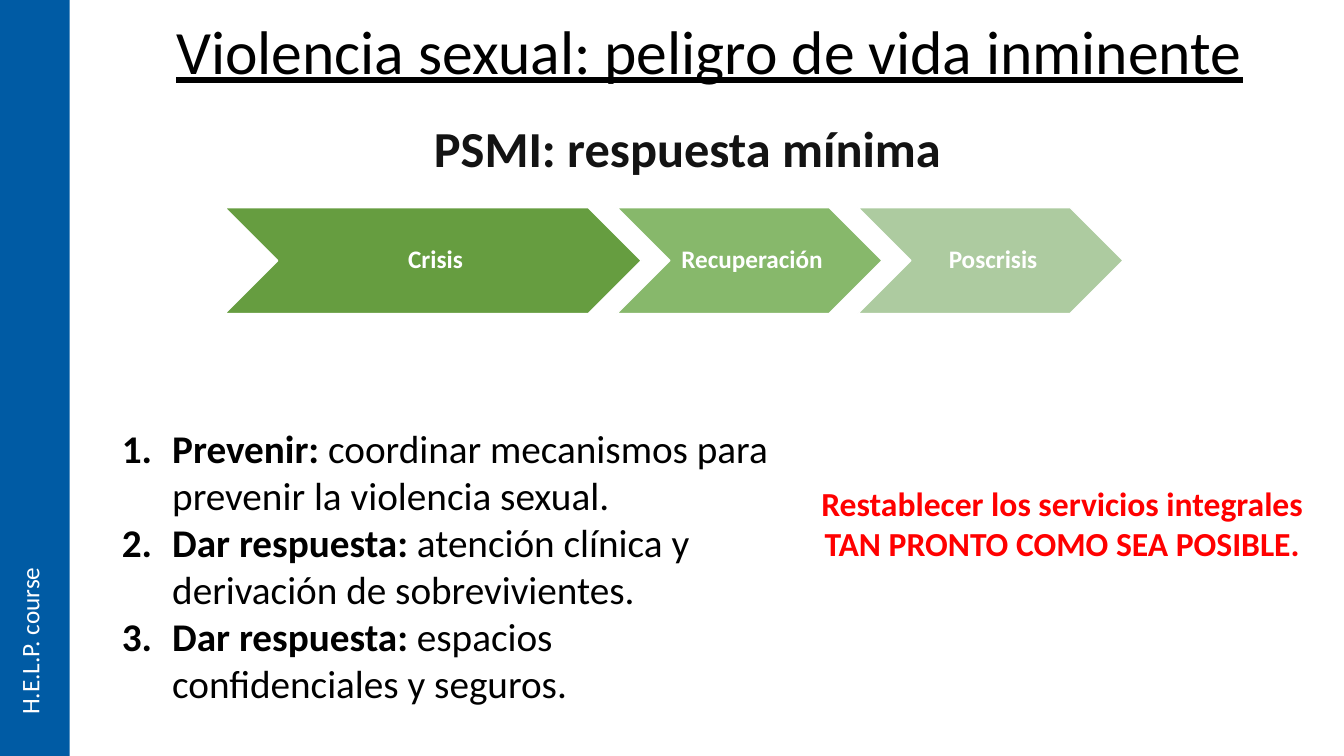
import pptx
import pptx.util
import pptx.dml.color
import pptx.enum.shapes
import pptx.enum.text
import pptx.oxml.ns
from lxml import etree

RGB = pptx.dml.color.RGBColor
BLUE = RGB(0x00, 0x5B, 0xA4)
WHITE = RGB(0xFF, 0xFF, 0xFF)
BLACK = RGB(0x00, 0x00, 0x00)
INK = RGB(0x13, 0x13, 0x13)
RED = RGB(0xFF, 0x00, 0x00)
GREENS = [RGB(0x66, 0x9D, 0x40), RGB(0x87, 0xB8, 0x6B), RGB(0xAD, 0xCB, 0xA0)]

WIDTH, HEIGHT = pptx.util.Inches(13.33), pptx.util.Inches(7.5)
CENTER = pptx.enum.text.PP_ALIGN.CENTER
GROW = pptx.enum.text.MSO_AUTO_SIZE.SHAPE_TO_FIT_TEXT
SHAPES = pptx.enum.shapes.MSO_SHAPE

PHASES = [("Crisis", 30.98), ("Recuperación", 19.73), ("Poscrisis", 19.73)]
PHASE_OVERLAP = 1.8
ACTIONS = [
    ("Prevenir:", " coordinar mecanismos para prevenir la violencia sexual."),
    ("Dar respuesta:", " atención clínica y derivación de sobrevivientes."),
    ("Dar respuesta:", " espacios confidenciales y seguros."),
]


def share(left, top, width, height):
    """Turn percentages of the slide's size into lengths."""
    return (int(WIDTH * left / 100), int(HEIGHT * top / 100),
            int(WIDTH * width / 100), int(HEIGHT * height / 100))


def assign(target, values):
    for name, value in values.items():
        setattr(target, name, value)


def add_run(p, text, size, color, **styles):
    r = p.add_run()
    r.text = text
    assign(r.font, {"name": "Calibri", "size": pptx.util.Pt(size), **styles})
    r.font.color.rgb = color


def add_shape(s, kind, box, fill, line=None):
    sp = s.shapes.add_shape(kind, *share(*box))
    sp.shadow.inherit = False
    sp.fill.solid()
    sp.fill.fore_color.rgb = fill
    if line is None:
        sp.line.fill.background()
    else:
        sp.line.color.rgb = line
        sp.line.width = pptx.util.Pt(1)
    return sp


def add_text_box(s, box, **frame):
    tf = s.shapes.add_textbox(*share(*box)).text_frame
    assign(tf, {"word_wrap": True, **frame})
    return tf


def add_heading(s, box, text, size, color, frame=None, para=None, **styles):
    tf = add_text_box(s, box, **(frame or {}))
    p = tf.paragraphs[0]
    assign(p, {"alignment": CENTER, **(para or {})})
    add_run(p, text, size, color, **styles)


def add_side_bar(s):
    add_shape(s, SHAPES.RECTANGLE, (0, 0, 5.18, 100), BLUE)
    tf = add_text_box(s, (0.68, 74.8, 3.75, 21.07), word_wrap=False, auto_size=GROW)
    body = tf.paragraphs[0]._p.getparent().find(pptx.oxml.ns.qn("a:bodyPr"))
    body.set("vert", "vert270")
    add_run(tf.paragraphs[0], "H.E.L.P. course", 18, WHITE)


def add_phases(s, left, top, height):
    inset = pptx.util.Inches(0.03)
    for (name, width), green in zip(PHASES, GREENS):
        sp = add_shape(s, SHAPES.CHEVRON, (left, top, width, height), green, WHITE)
        tf = sp.text_frame
        assign(tf, {"word_wrap": True,
                    "vertical_anchor": pptx.enum.text.MSO_ANCHOR.MIDDLE,
                    "margin_left": pptx.util.Inches(0.08), "margin_top": inset,
                    "margin_right": inset, "margin_bottom": inset})
        p = tf.paragraphs[0]
        assign(p, {"alignment": CENTER, "line_spacing": 0.9})
        add_run(p, name, 18, WHITE, bold=True)
        left += width - PHASE_OVERLAP


def number_paragraph(p):
    pPr = p._p.get_or_add_pPr()
    indent = pptx.util.Inches(0.5)
    pPr.set("marL", str(indent))
    pPr.set("indent", str(-indent))
    font = etree.SubElement(pPr, pptx.oxml.ns.qn("a:buFont"))
    font.set("typeface", "+mj-lt")
    number = etree.SubElement(pPr, pptx.oxml.ns.qn("a:buAutoNum"))
    number.set("type", "arabicPeriod")


def add_actions(s, box):
    tf = add_text_box(s, box, auto_size=GROW)
    for i, (lead, detail) in enumerate(ACTIONS):
        p = tf.add_paragraph() if i else tf.paragraphs[0]
        number_paragraph(p)
        add_run(p, lead, 28, BLACK, bold=True)
        add_run(p, detail, 28, BLACK, bold=False)


def main():
    prs = pptx.Presentation()
    assign(prs, {"slide_width": WIDTH, "slide_height": HEIGHT})
    s = prs.slides.add_slide(prs.slide_layouts[6])
    add_side_bar(s)
    add_heading(s, (7.58, 2.13, 90.47, 25.47),
                "Violencia sexual: peligro de vida inminente", 44, BLACK,
                para={"line_spacing": 0.9}, underline=True)
    add_phases(s, 16.73, 27.47, 14)
    add_actions(s, (8.33, 55.47, 50.41, 32.8))
    add_heading(s, (16.73, 14.8, 68.87, 9.47), "PSMI: respuesta mínima", 36, INK,
                frame={"auto_size": GROW}, bold=True)
    add_heading(s, (58.74, 63.2, 40.59, 12.13),
                "Restablecer los servicios integrales TAN PRONTO COMO SEA POSIBLE.",
                24, RED, frame={"auto_size": GROW}, bold=True)
    prs.save("out.pptx")


if __name__ == "__main__":
    main()
